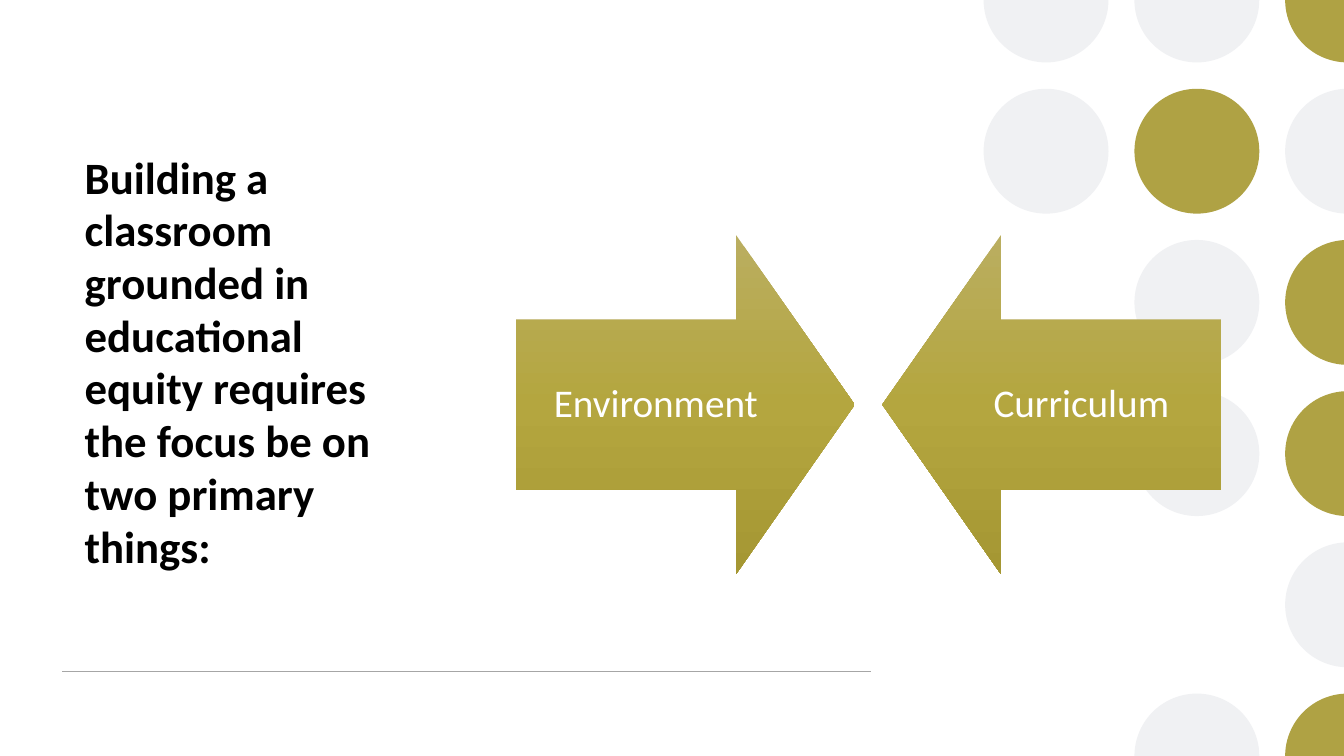
"""Build a slide with two facing arrows beside a title and a pattern of dots."""
import copy
import math
from dataclasses import dataclass

import pptx
import pptx.dml.color
import pptx.enum.shapes
import pptx.enum.text
import pptx.oxml
import pptx.oxml.ns
import pptx.util

Pt = pptx.util.Pt
MSO_SHAPE = pptx.enum.shapes.MSO_SHAPE
PP_ALIGN = pptx.enum.text.PP_ALIGN
MSO_ANCHOR = pptx.enum.text.MSO_ANCHOR
WIDTH, HEIGHT = 960, 540
FONT = "Calibri"
COLORS = {
    "gray": "F0F1F3", "gold": "AFA244", "rule": "A6A6A6",
    "black": "000000", "white": "FFFFFF",
    "top": "BAAE60", "middle": "B4A63F", "bottom": "A59733",
}
DOT_ROWS = ("ggo", "gog", " go", " go", "  g", " go")
DOT_COLORS = {"g": "gray", "o": "gold"}
DOT_LEFT, DOT_STEP_X, DOT_STEP_Y, DOT_RADIUS = 747.2, 107.7, 108, 44.6
ARROW_TOP, ARROW_SIZE = 168, 242
LABEL_TOP, LABEL_WIDTH, LABEL_HEIGHT, LABEL_INSET = 228.5, 200, 121, 15.84


@dataclass(frozen=True)
class Arrow:
    """One block arrow and its label."""
    text: str
    preset: pptx.enum.shapes.MSO_SHAPE
    left: float
    label_left: float


ARROWS = (
    Arrow("Environment", MSO_SHAPE.RIGHT_ARROW, 368.5, 368.5),
    Arrow("Curriculum", MSO_SHAPE.LEFT_ARROW, 630.2, 672.4),
)


def rgb(name: str) -> pptx.dml.color.RGBColor:
    """Return the named colour."""
    return pptx.dml.color.RGBColor.from_string(COLORS[name])


def add_run(p, text: str, size: float, color: str, bold: bool = False) -> None:
    """Add one formatted run to a paragraph."""
    r = p.add_run()
    r.text = text
    r.font.name = FONT
    r.font.size = Pt(size)
    r.font.bold = bold
    r.font.color.rgb = rgb(color)


def point_xml(x: float, y: float) -> str:
    """Return the XML of an outline point."""
    return f'<a:pt x="{Pt(x)}" y="{Pt(y)}"/>'


def add_cut_dot(s, x: float, y: float):
    """Draw the visible part of a dot that crosses the slide edge."""
    rad = DOT_RADIUS
    left, right = x - rad, min(x + rad, WIDTH)
    top, bottom = max(y - rad, 0), min(y + rad, HEIGHT)
    outline = s.shapes.build_freeform(Pt(left), Pt(top))
    outline.add_line_segments([(Pt(right), Pt(top)), (Pt(right), Pt(bottom)),
                               (Pt(left), Pt(bottom))])
    sp = outline.convert_to_shape()

    cut_right, cut_top, cut_bottom = x + rad > WIDTH, y < rad, y > HEIGHT - rad
    edge = math.degrees(math.acos((WIDTH - x) / rad)) if cut_right else 0
    begin = max(edge, 180 if cut_bottom else 0)
    end = min(360 - edge, 180 if cut_top else 360)
    angle = math.radians(begin)
    start = point_xml(x + rad * math.cos(angle) - left,
                      y + rad * math.sin(angle) - top)
    corner = ""
    if cut_right and (cut_top or cut_bottom):
        corner_y = 0 if cut_top else bottom - top
        corner = f"<a:lnTo>{point_xml(right - left, corner_y)}</a:lnTo>"
    curve = pptx.oxml.parse_xml(
        f'<a:path {pptx.oxml.ns.nsdecls("a")} w="{Pt(right - left)}" '
        f'h="{Pt(bottom - top)}"><a:moveTo>{start}</a:moveTo>'
        f'<a:arcTo wR="{Pt(rad)}" hR="{Pt(rad)}" stAng="{round(begin * 60000)}" '
        f'swAng="{round((end - begin) * 60000)}"/>{corner}<a:close/></a:path>')
    box = sp._element.spPr.find(".//" + pptx.oxml.ns.qn("a:path"))
    box.getparent().replace(box, curve)
    return sp


def add_dot(s, x: float, y: float, color: str) -> None:
    """Draw a dot centred at x, y, cut off at the slide edges."""
    rad = DOT_RADIUS
    if rad <= x <= WIDTH - rad and rad <= y <= HEIGHT - rad:
        sp = s.shapes.add_shape(MSO_SHAPE.OVAL, Pt(x - rad), Pt(y - rad),
                                Pt(2 * rad), Pt(2 * rad))
    else:
        sp = add_cut_dot(s, x, y)
    sp.shadow.inherit = False
    sp.fill.solid()
    sp.fill.fore_color.rgb = rgb(color)
    sp.line.fill.background()


def add_rule(s) -> None:
    """Draw the thin line under the content."""
    rule = s.shapes.add_connector(pptx.enum.shapes.MSO_CONNECTOR.STRAIGHT,
                                  Pt(44.6), Pt(479.5), Pt(622), Pt(479.5))
    rule.line.color.rgb = rgb("rule")
    rule.line.width = Pt(1)
    rule._element.spPr.append(pptx.oxml.parse_xml(
        f'<a:effectLst {pptx.oxml.ns.nsdecls("a")}/>'))


def add_title(s, text: str) -> None:
    """Place and fill the title placeholder."""
    sp = s.shapes.title
    sp.left, sp.top, sp.width, sp.height = Pt(53.3), Pt(105), Pt(260.6), Pt(405)
    tf = sp.text_frame
    tf.word_wrap = True
    tf.auto_size = pptx.enum.text.MSO_AUTO_SIZE.NONE
    tf.vertical_anchor = MSO_ANCHOR.TOP
    p = tf.paragraphs[0]
    p.alignment = PP_ALIGN.LEFT
    p.line_spacing = 0.98
    add_run(p, text, 32, "black", True)


def add_arrow(s, arrow: Arrow) -> None:
    """Draw a gradient arrow with its label."""
    sp = s.shapes.add_shape(arrow.preset, Pt(arrow.left), Pt(ARROW_TOP),
                            Pt(ARROW_SIZE), Pt(ARROW_SIZE))
    sp.adjustments[0], sp.adjustments[1] = 0.5, 0.35
    sp.shadow.inherit = False
    sp.line.fill.background()
    sp.fill.gradient()
    sp.fill.gradient_angle = 270
    stops = sp._element.spPr.find(".//" + pptx.oxml.ns.qn("a:gsLst"))
    stops.append(copy.deepcopy(stops[0]))
    names = ("top", "middle", "bottom")
    for stop, name, position in zip(sp.fill.gradient_stops, names, (0, 0.5, 1)):
        stop.color.rgb = rgb(name)
        stop.position = position

    label = s.shapes.add_textbox(Pt(arrow.label_left), Pt(LABEL_TOP),
                                 Pt(LABEL_WIDTH), Pt(LABEL_HEIGHT))
    tf = label.text_frame
    tf.word_wrap = True
    tf.vertical_anchor = MSO_ANCHOR.MIDDLE
    tf.margin_left = tf.margin_right = Pt(LABEL_INSET)
    tf.margin_top = tf.margin_bottom = Pt(LABEL_INSET)
    p = tf.paragraphs[0]
    p.alignment = PP_ALIGN.CENTER
    p.line_spacing = 0.9
    add_run(p, arrow.text, 28, "white")


def main() -> None:
    """Build and save the presentation."""
    prs = pptx.Presentation()
    prs.slide_width, prs.slide_height = Pt(WIDTH), Pt(HEIGHT)
    s = prs.slides.add_slide(prs.slide_layouts[5])
    for row, marks in enumerate(DOT_ROWS):
        for col, mark in enumerate(marks):
            if mark in DOT_COLORS:
                add_dot(s, DOT_LEFT + col * DOT_STEP_X, row * DOT_STEP_Y,
                        DOT_COLORS[mark])
    add_rule(s)
    add_title(s, "Building a classroom grounded in educational equity requires "
                 "the focus be on two primary things:")
    for arrow in ARROWS:
        add_arrow(s, arrow)
    prs.save("out.pptx")


if __name__ == "__main__":
    main()
